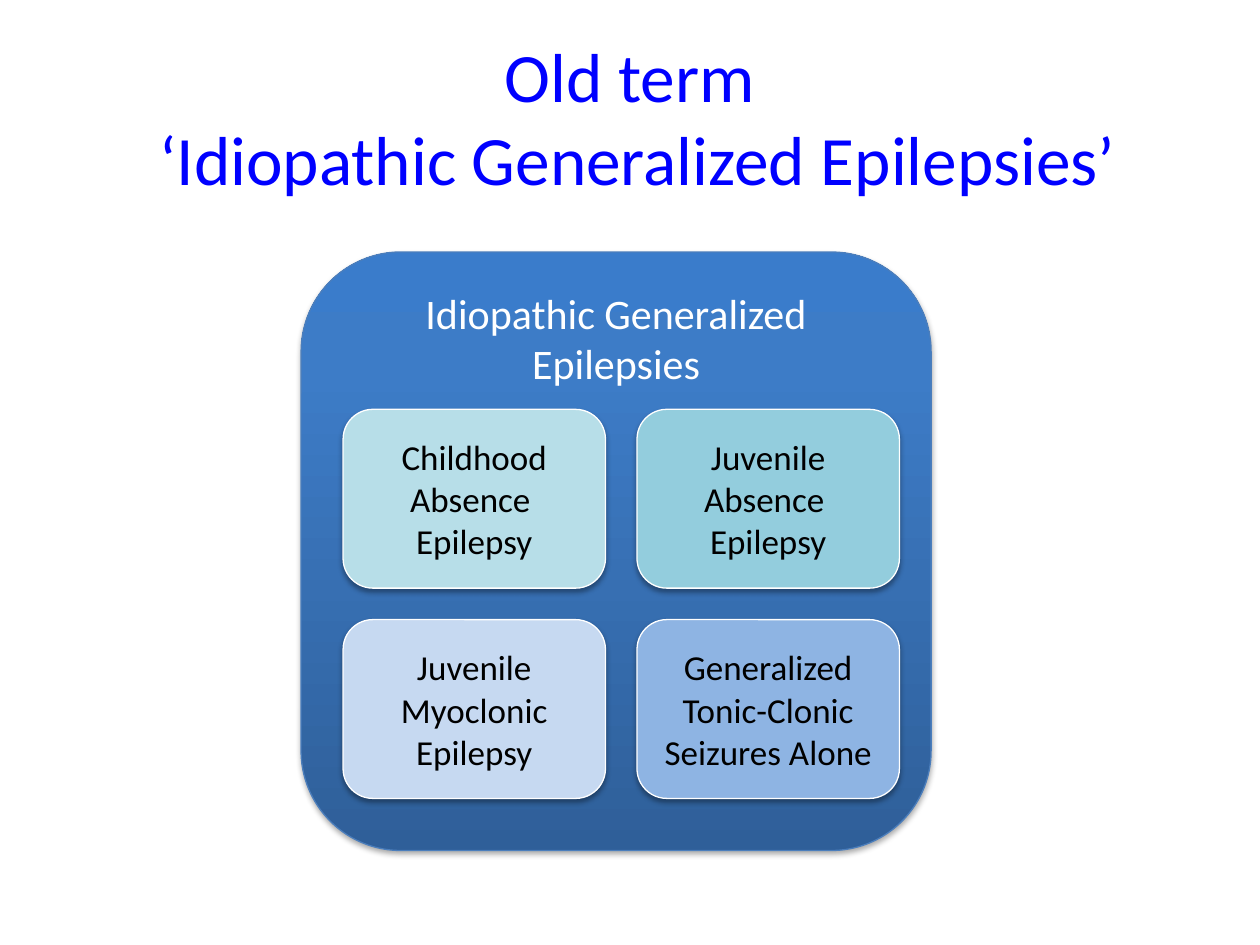
from copy import deepcopy

from lxml.etree import SubElement
from pptx import Presentation
from pptx.dml.color import RGBColor
from pptx.enum.shapes import MSO_SHAPE as Preset
from pptx.enum.text import MSO_ANCHOR as Anchor, PP_ALIGN as Align
from pptx.oxml.ns import qn
from pptx.util import Inches, Pt

BLUE = RGBColor(0x00, 0x00, 0xFF)
WHITE = RGBColor(0xFF, 0xFF, 0xFF)
BLACK = RGBColor(0x00, 0x00, 0x00)
PANEL_LINE = RGBColor(0x4B, 0x7E, 0xBC)
PANEL_STOPS = [
    (0, RGBColor(0x2F, 0x5F, 0x99)),
    (0.8, RGBColor(0x3D, 0x7C, 0xC7)),
    (1, RGBColor(0x3A, 0x7C, 0xCB)),
]
SYNDROMES = [
    [("Childhood\nAbsence \nEpilepsy", RGBColor(0xB7, 0xDE, 0xE8)),
     ("Juvenile\nAbsence \nEpilepsy", RGBColor(0x93, 0xCD, 0xDD))],
    [("Juvenile\nMyoclonic\nEpilepsy", RGBColor(0xC6, 0xD9, 0xF1)),
     ("Generalized\nTonic-Clonic\nSeizures Alone", RGBColor(0x8E, 0xB4, 0xE3))],
]


def write_text(shape, text, size, color, anchor):
    """Fill a shape with centred, wrapped text."""
    frame = shape.text_frame
    frame.text = text
    frame.word_wrap = True
    frame.vertical_anchor = anchor
    font_format = {"name": "Calibri", "size": Pt(size)}
    for para in frame.paragraphs:
        para.alignment = Align.CENTER
        for span in para.runs:
            span.font.color.rgb = color
            for key, value in font_format.items():
                setattr(span.font, key, value)


def add_shadow(shape):
    """Give a shape a soft shadow straight below it."""
    shape.shadow.inherit = False
    effects = shape._element.spPr.find(qn("a:effectLst"))
    shadow = SubElement(effects, qn("a:outerShdw"), blurRad=str(Pt(3.1)),
                        dist=str(Pt(1.8)), dir="5400000", rotWithShape="0")
    tint = SubElement(shadow, qn("a:srgbClr"), val="000000")
    SubElement(tint, qn("a:alpha"), val="35000")


def add_card(page, box, line_color):
    """Add a rounded card with an outline and a shadow."""
    card = page.shapes.add_shape(Preset.ROUNDED_RECTANGLE, *map(Inches, box))
    card.line.color.rgb = line_color
    card.line.width = Pt(0.75)
    add_shadow(card)
    return card


def fill_gradient(shape, stops):
    """Fill a shape with colour stops running from bottom to top."""
    shape.fill.gradient()
    shape.fill.gradient_angle = 90
    stop_list = shape._element.spPr.find(qn("a:gradFill")).find(qn("a:gsLst"))
    while len(stop_list) < len(stops):
        stop_list.append(deepcopy(stop_list[0]))
    for stop, (position, color) in zip(shape.fill.gradient_stops, stops):
        stop.position = position
        stop.color.rgb = color


def add_title(page, box):
    """Add the slide heading in its box."""
    title = page.shapes.add_textbox(*map(Inches, box))
    write_text(title, "Old term\v ‘Idiopathic Generalized Epilepsies’",
               39.6, BLUE, Anchor.MIDDLE)


def add_syndrome_grid(page, box, gap):
    """Place the syndrome cards in equal rows and columns."""
    left, top, width, height = box
    rows, columns = len(SYNDROMES), len(SYNDROMES[0])
    card_width = (width - gap * (columns - 1)) / columns
    card_height = (height - gap * (rows - 1)) / rows
    for row, syndromes in enumerate(SYNDROMES):
        for column, (name, color) in enumerate(syndromes):
            card_box = (left + column * (card_width + gap),
                        top + row * (card_height + gap),
                        card_width, card_height)
            card = add_card(page, card_box, WHITE)
            card.fill.solid()
            card.fill.fore_color.rgb = color
            write_text(card, name, 20, BLACK, Anchor.MIDDLE)


def add_panel(page, box):
    """Add the group panel with its heading and syndrome cards."""
    left, top, width, height = box
    panel = add_card(page, box, PANEL_LINE)
    fill_gradient(panel, PANEL_STOPS)
    write_text(panel, "Idiopathic Generalized Epilepsies", 24, WHITE, Anchor.TOP)
    grid_box = (left + width / 15, top + height * 0.263,
                width * 0.883, height * 0.65)
    add_syndrome_grid(page, grid_box, width / 20)


def main():
    """Build and save the slide."""
    deck = Presentation()
    width, height = 10, 7.5
    deck.slide_width, deck.slide_height = Inches(width), Inches(height)
    page = deck.slides.add_slide(deck.slide_layouts[6])
    add_title(page, (width * 0.05, height * 0.04, width * 0.9, height / 6))
    add_panel(page, (2.39, 2, width / 2, 4.75))
    deck.save("out.pptx")


if __name__ == "__main__":
    main()
